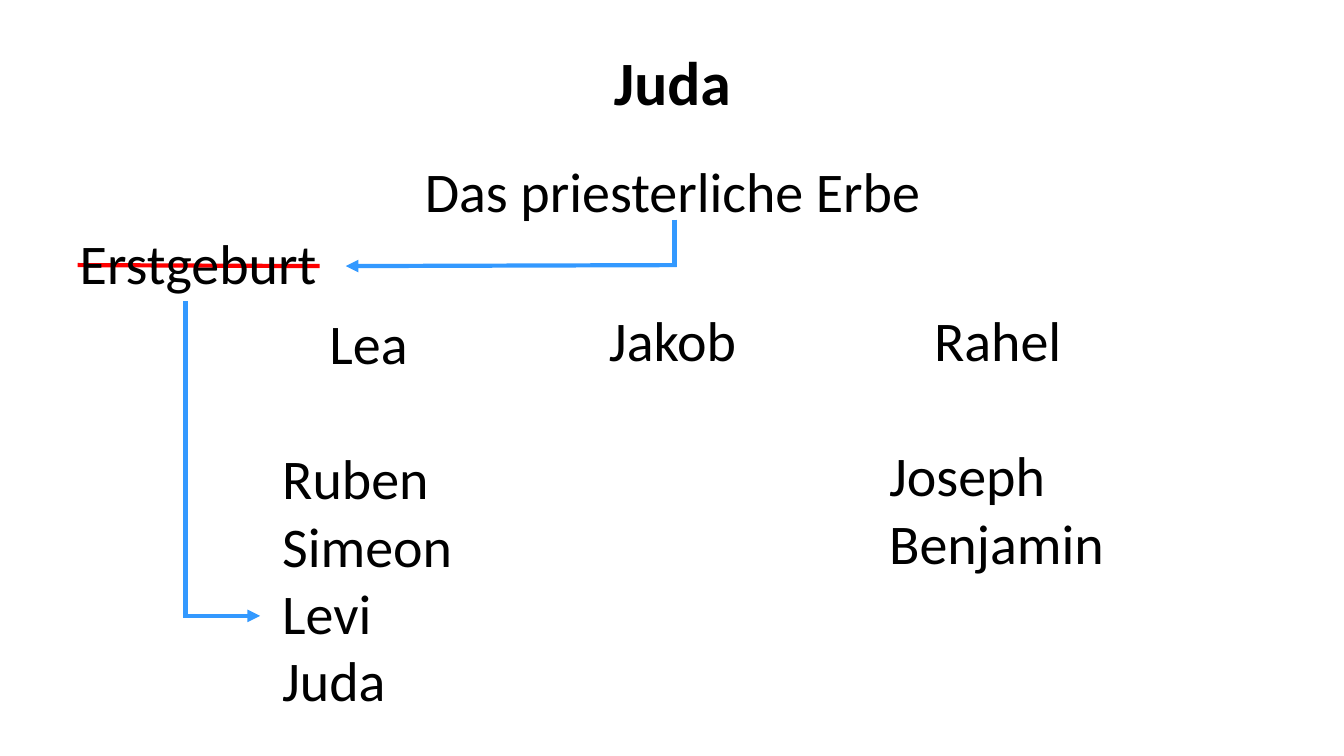
from typing import NamedTuple

from lxml import etree
from pptx import Presentation
from pptx.dml.color import RGBColor
from pptx.enum.shapes import MSO_CONNECTOR
from pptx.enum.text import MSO_ANCHOR, MSO_AUTO_SIZE, PP_ALIGN
from pptx.oxml.ns import qn
from pptx.util import Inches, Pt

CENTER, LEFT = PP_ALIGN.CENTER, PP_ALIGN.LEFT
MIDDLE = MSO_ANCHOR.MIDDLE
GROW, FIXED = MSO_AUTO_SIZE.SHAPE_TO_FIT_TEXT, MSO_AUTO_SIZE.NONE
STRAIGHT = MSO_CONNECTOR.STRAIGHT
FONT = "Calibri"
BLACK, BLUE, RED = "000000", "3399FF", "FF0000"
TEXT_SIZE = 40
LINE_HEIGHT = 48.8  # points, one line of text at TEXT_SIZE


class Label(NamedTuple):
    heading: str
    left: float
    top: float
    width: float
    height: float
    children: tuple[str, ...] = ()


class Line(NamedTuple):
    start: tuple[float, float]
    end: tuple[float, float]
    color: str = BLUE
    arrow: bool = False


STRIKE = Line((0.77, 2.63), (3.17, 2.64), RED)
LABELS = [
    Label("Lea", 2.7, 3.01, 1.91, 4.14, ("Ruben", "Simeon", "Levi", "Juda")),
    Label("Rahel", 8.72, 2.98, 2.35, 2.79, ("Joseph", "Benjamin")),
    Label("Jakob", 5.93, 2.98, 1.48, 0.77),
    Label("Das priesterliche Erbe", 4.09, 1.5, 5.16, 0.77),
    Label("Erstgeburt", 0.68, 2.22, 2.57, 0.77),
]
ARROWS = [
    Line((6.69, 2.18), (6.69, 2.65)),
    Line((6.71, 2.63), (3.43, 2.64), arrow=True),
    Line((1.84, 2.99), (1.84, 6.13)),
    Line((1.84, 6.11), (2.58, 6.11), arrow=True),
]


def rgb(color: str) -> RGBColor:
    return RGBColor.from_string(color)


def write(p, text: str, *, size: float = TEXT_SIZE, bold: bool = False,
          align=LEFT, after: float = 0) -> None:
    p.alignment = align
    p.space_after = Pt(after)
    r = p.add_run()
    r.text = text
    r.font.name, r.font.size, r.font.bold = FONT, Pt(size), bold
    r.font.color.rgb = rgb(BLACK)


def add_title(slide, text: str) -> None:
    sp = slide.shapes.title
    sp.left, sp.top = Inches(0.92), Inches(0.4)
    sp.width, sp.height = Inches(11.5), Inches(0.89)
    tf = sp.text_frame
    tf.vertical_anchor, tf.auto_size = MIDDLE, FIXED
    p = tf.paragraphs[0]
    p.line_spacing = 0.9
    write(p, text, size=44, bold=True, align=CENTER)


def add_label(slide, label: Label) -> None:
    """Draw a centred name with any children listed one line below it."""
    sp = slide.shapes.add_textbox(Inches(label.left), Inches(label.top),
                                  Inches(label.width), Inches(label.height))
    tf = sp.text_frame
    tf.word_wrap, tf.auto_size = False, GROW
    write(tf.paragraphs[0], label.heading, align=CENTER,
          after=LINE_HEIGHT if label.children else 0)
    for child in label.children:
        write(tf.add_paragraph(), child)


def add_line(slide, line: Line) -> None:
    points = [Inches(v) for v in (*line.start, *line.end)]
    sp = slide.shapes.add_connector(STRAIGHT, *points)
    sp.line.color.rgb = rgb(line.color)
    sp.line.width = Pt(3)
    if line.arrow:
        etree.SubElement(sp.line._get_or_add_ln(), qn("a:tailEnd"), type="triangle")
    etree.SubElement(sp._element.spPr, qn("a:effectLst"))


def main() -> None:
    prs = Presentation()
    prs.slide_width, prs.slide_height = Inches(13.33), Inches(7.5)
    slide = prs.slides.add_slide(prs.slide_layouts.get_by_name("Title Only"))
    add_title(slide, "Juda")
    add_line(slide, STRIKE)
    for label in LABELS:
        add_label(slide, label)
    for arrow in ARROWS:
        add_line(slide, arrow)
    prs.save("out.pptx")


if __name__ == "__main__":
    main()
